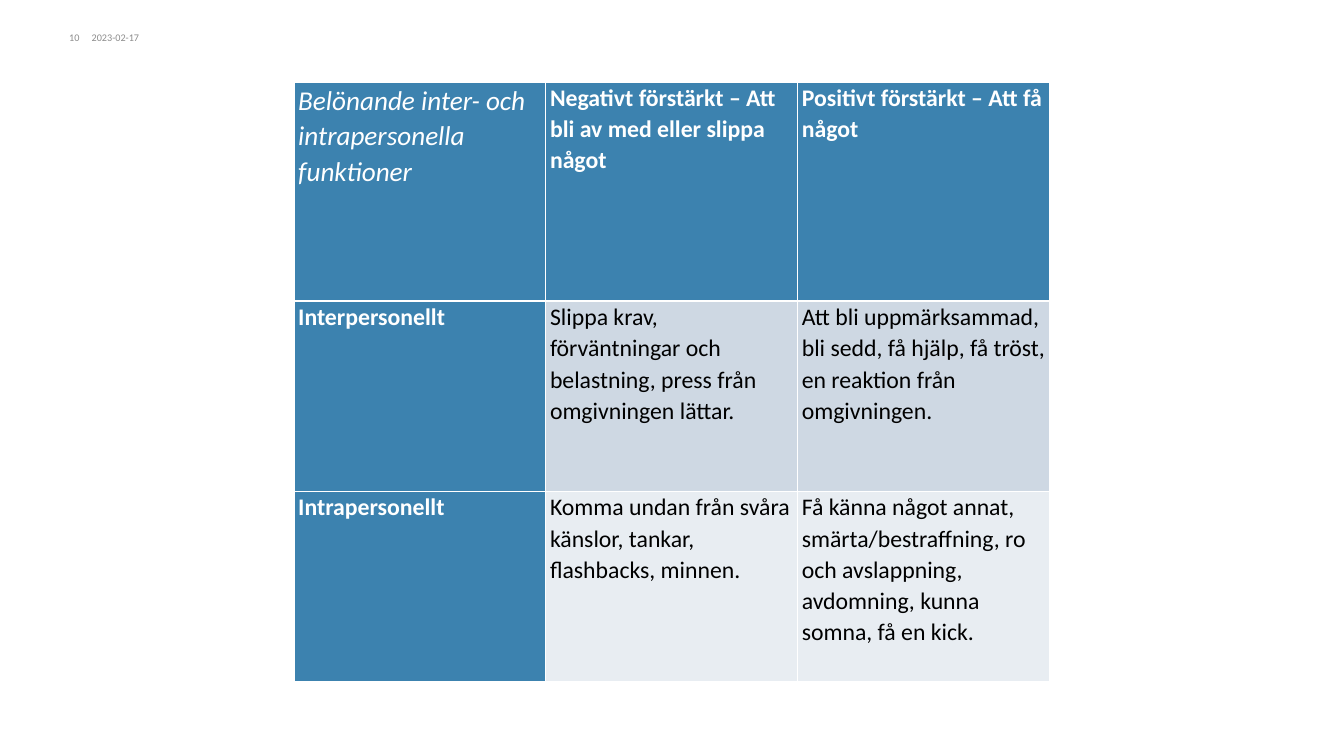
"""Build a slide with a table of rewarding inter- and intrapersonal functions."""
import dataclasses
import typing

import lxml.etree
import pptx
import pptx.dml.color
import pptx.enum.text
import pptx.oxml.ns
import pptx.util

Inches = pptx.util.Inches
Pt = pptx.util.Pt
Align = pptx.enum.text.PP_ALIGN


@dataclasses.dataclass(frozen=True)
class Theme:
    font: str = "Calibri"
    white: str = "FFFFFF"
    black: str = "000000"
    grey: str = "8C8C8C"
    blue: str = "3C82AF"
    bands: tuple[str, ...] = ("CED8E3", "E8EDF2")
    small: int = 12
    body: int = 28
    title: int = 32
    thin: int = 1
    thick: int = 3


@dataclasses.dataclass(frozen=True)
class Style:
    size: int
    color: str
    bold: bool = False
    italic: bool = False


@dataclasses.dataclass(frozen=True)
class Label:
    text: str
    left: float
    width: float
    align: Align


THEME = Theme()
NOTE = Style(THEME.small, THEME.grey)
TITLE = Style(THEME.title, THEME.white, italic=True)
HEAD = Style(THEME.body, THEME.white, bold=True)
BODY = Style(THEME.body, THEME.black)

LABELS = (
    Label("2023-02-17", 1.5, 0.87, Align.LEFT),
    Label("10", 0.91, 0.39, Align.RIGHT),
)
COLUMN = 4.12
HEIGHTS = (3.59, 3.11, 3.11)
ROWS = (
    (
        "Belönande inter- och intrapersonella funktioner",
        "Negativt förstärkt – Att bli av med eller slippa något",
        "Positivt förstärkt – Att få något",
    ),
    (
        "Interpersonellt",
        "Slippa krav, förväntningar och belastning, press från omgivningen lättar.",
        "Att bli uppmärksammad, bli sedd, få hjälp, få tröst, en reaktion från omgivningen.",
    ),
    (
        "Intrapersonellt",
        "Komma undan från svåra känslor, tankar, flashbacks, minnen.",
        "Få känna något annat, smärta/bestraffning, ro och avslappning, avdomning, kunna somna, få en kick.",
    ),
)


def tint(color: str) -> pptx.dml.color.RGBColor:
    return pptx.dml.color.RGBColor.from_string(color)


def add_run(para: typing.Any, text: str, style: Style) -> None:
    run = para.add_run()
    run.text = text
    run.font.name = THEME.font
    run.font.size = Pt(style.size)
    run.font.bold = style.bold
    run.font.italic = style.italic
    run.font.color.rgb = tint(style.color)


def add_label(slide: typing.Any, label: Label) -> None:
    box = slide.shapes.add_textbox(
        Inches(label.left), Inches(0.52), Inches(label.width), Inches(0.2)
    )
    frame = box.text_frame
    frame.word_wrap = True
    frame.margin_left = frame.margin_right = 0
    frame.margin_top = frame.margin_bottom = 0
    para = frame.paragraphs[0]
    para.alignment = label.align
    add_run(para, label.text, NOTE)


def set_edges(cell: typing.Any, widths: dict[str, int]) -> None:
    qn = pptx.oxml.ns.qn
    props = cell._tc.get_or_add_tcPr()
    for index, (side, width) in enumerate(widths.items()):
        line = lxml.etree.Element(qn(f"a:ln{side}"), w=str(Pt(width)))
        fill = lxml.etree.SubElement(line, qn("a:solidFill"))
        lxml.etree.SubElement(fill, qn("a:srgbClr"), val=THEME.white)
        props.insert(index, line)


def fill_cell(cell: typing.Any, text: str, row: int, col: int) -> None:
    head = row == 0 or col == 0
    cell.margin_left = cell.margin_right = Inches(0.07)
    cell.margin_top = cell.margin_bottom = 0
    cell.fill.solid()
    cell.fill.fore_color.rgb = tint(THEME.blue if head else THEME.bands[row - 1])
    set_edges(cell, {
        "L": THEME.thin,
        "R": THEME.thin,
        "T": THEME.thick if row == 1 else THEME.thin,
        "B": THEME.thick if row == 0 else THEME.thin,
    })
    para = cell.text_frame.paragraphs[0]
    para.line_spacing = 1.07
    para.space_after = Pt(8)
    style = TITLE if row == col == 0 else HEAD if head else BODY
    add_run(para, text, style)


def add_grid(slide: typing.Any) -> None:
    count = len(ROWS[0])
    table = slide.shapes.add_table(
        len(ROWS), count, Inches(4.81), Inches(1.34),
        Inches(COLUMN * count), Inches(sum(HEIGHTS)),
    ).table
    table.first_col = True
    table.horz_banding = False
    for column in table.columns:
        column.width = Inches(COLUMN)
    for row, (height, texts) in enumerate(zip(HEIGHTS, ROWS)):
        table.rows[row].height = Inches(height)
        for col, text in enumerate(texts):
            fill_cell(table.cell(row, col), text, row, col)


def main() -> None:
    deck = pptx.Presentation()
    deck.slide_width = Inches(21.99)
    deck.slide_height = Inches(12.37)
    slide = deck.slides.add_slide(deck.slide_layouts[6])
    for label in LABELS:
        add_label(slide, label)
    add_grid(slide)
    deck.save("out.pptx")


if __name__ == "__main__":
    main()
